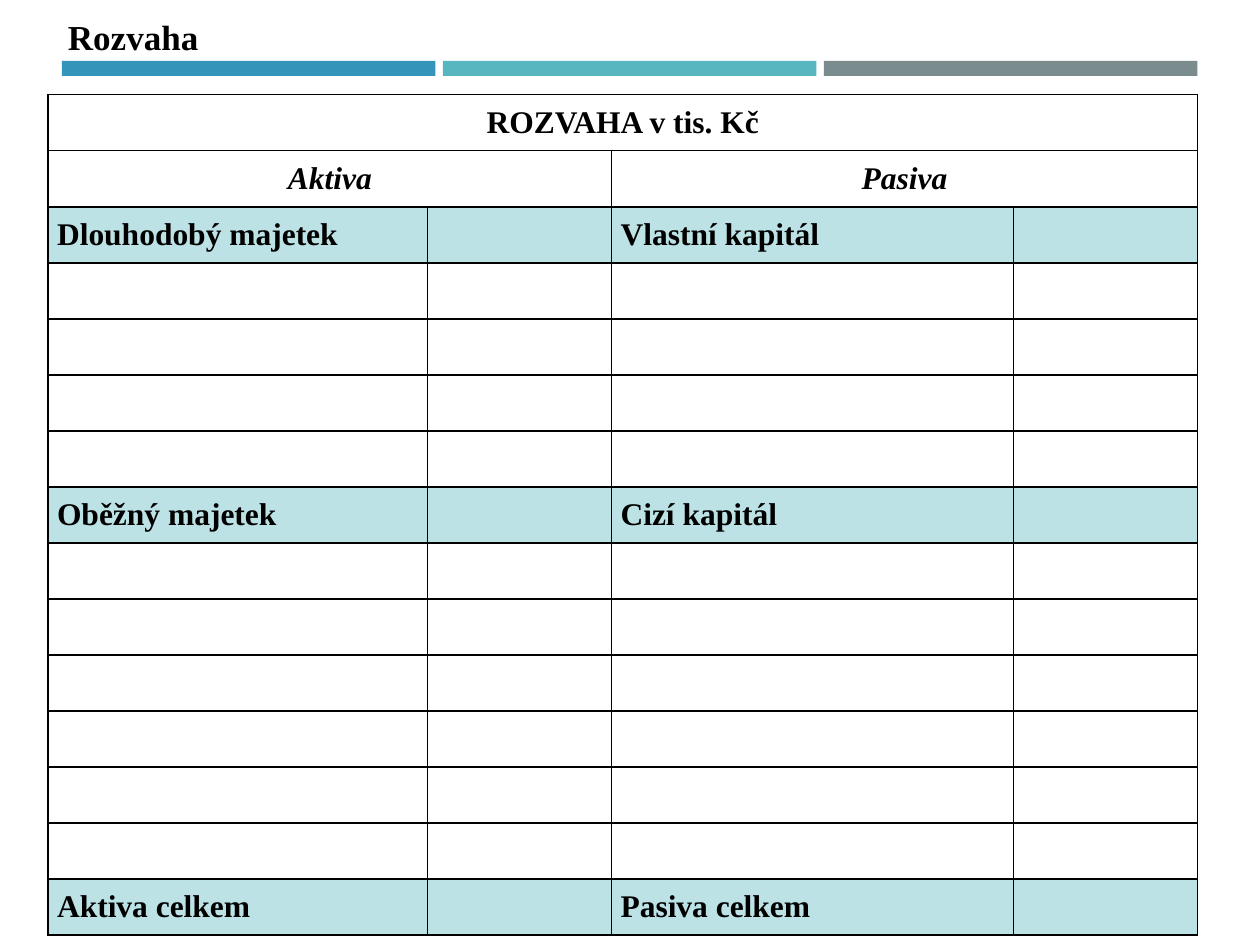
from lxml import etree
from pptx import Presentation
from pptx.dml.color import RGBColor
from pptx.enum import shapes, text
from pptx.oxml import ns
from pptx.util import Cm, Pt

HEADING = "Rozvaha"
TITLE = "ROZVAHA v tis. Kč"
SIDES = ("Aktiva", "Pasiva")
SECTIONS = {
    2: ("Dlouhodobý majetek", "Vlastní kapitál"),
    7: ("Oběžný majetek", "Cizí kapitál"),
    14: ("Aktiva celkem", "Pasiva celkem"),
}
ROW_COUNT = 15
ROW_HEIGHT = 1.13
COLUMN_WIDTHS = (7.65, 3.71, 8.1, 3.71)
TABLE_LEFT, TABLE_TOP = 0.97, 1.91
SECTION_FILL = "BCE2E6"
BAR_COLORS = ("3494BA", "58B6C0", "7A8C8E")
BAR_LEFT, BAR_TOP, BAR_WIDTH, BAR_HEIGHT, BAR_STEP = 1.25, 1.23, 7.53, 0.3, 7.68


def color(value):
    return RGBColor.from_string(value)


def write(frame, content, size=18, italic=False, align=text.PP_ALIGN.LEFT):
    paragraph = frame.paragraphs[0]
    paragraph.alignment = align
    run = paragraph.add_run()
    run.text = content
    run.font.name = "Times New Roman"
    run.font.size = Pt(size)
    run.font.bold = True
    run.font.italic = italic
    run.font.color.rgb = color("000000")


def add_borders(cell):
    properties = cell._tc.get_or_add_tcPr()
    for side in ("lnL", "lnR", "lnT", "lnB"):
        line = etree.SubElement(properties, ns.qn(f"a:{side}"), w=str(Pt(1)))
        fill = etree.SubElement(line, ns.qn("a:solidFill"))
        etree.SubElement(fill, ns.qn("a:srgbClr"), val="000000")


def add_bars(slide):
    for index, shade in enumerate(BAR_COLORS):
        bar = slide.shapes.add_shape(
            shapes.MSO_SHAPE.RECTANGLE, Cm(BAR_LEFT + index * BAR_STEP),
            Cm(BAR_TOP), Cm(BAR_WIDTH), Cm(BAR_HEIGHT))
        bar.shadow.inherit = False
        bar.fill.solid()
        bar.fill.fore_color.rgb = color(shade)
        bar.line.fill.background()


def add_heading(slide):
    heading = slide.shapes.add_textbox(Cm(1.12), Cm(0.18), Cm(3.18), Cm(1.11))
    heading.text_frame.word_wrap = False
    heading.text_frame.auto_size = text.MSO_AUTO_SIZE.SHAPE_TO_FIT_TEXT
    write(heading.text_frame, HEADING, size=20)


def add_balance_sheet(slide):
    sheet = slide.shapes.add_table(
        ROW_COUNT, len(COLUMN_WIDTHS), Cm(TABLE_LEFT), Cm(TABLE_TOP),
        Cm(sum(COLUMN_WIDTHS)), Cm(ROW_COUNT * ROW_HEIGHT)).table
    sheet.first_row = False
    sheet.horz_banding = False
    for column, width in zip(sheet.columns, COLUMN_WIDTHS):
        column.width = Cm(width)

    for number, row in enumerate(sheet.rows):
        row.height = Cm(ROW_HEIGHT)
        for cell in row.cells:
            add_borders(cell)
            cell.vertical_anchor = text.MSO_ANCHOR.MIDDLE
            cell.margin_left = cell.margin_right = Cm(0.18)
            cell.margin_top = cell.margin_bottom = 0
            if number in SECTIONS:
                cell.fill.solid()
                cell.fill.fore_color.rgb = color(SECTION_FILL)
            else:
                cell.fill.background()

    center = text.PP_ALIGN.CENTER
    sheet.cell(0, 0).merge(sheet.cell(0, 3))
    write(sheet.cell(0, 0).text_frame, TITLE, align=center)
    for index, side in enumerate(SIDES):
        first = 2 * index
        sheet.cell(1, first).merge(sheet.cell(1, first + 1))
        write(sheet.cell(1, first).text_frame, side, italic=True, align=center)
        for number, labels in SECTIONS.items():
            write(sheet.cell(number, first).text_frame, labels[index])


def main():
    deck = Presentation()
    deck.slide_width, deck.slide_height = Cm(25.4), Cm(19.05)
    slide = deck.slides.add_slide(deck.slide_layouts[6])
    add_bars(slide)
    add_heading(slide)
    add_balance_sheet(slide)
    deck.save("out.pptx")


if __name__ == "__main__":
    main()
